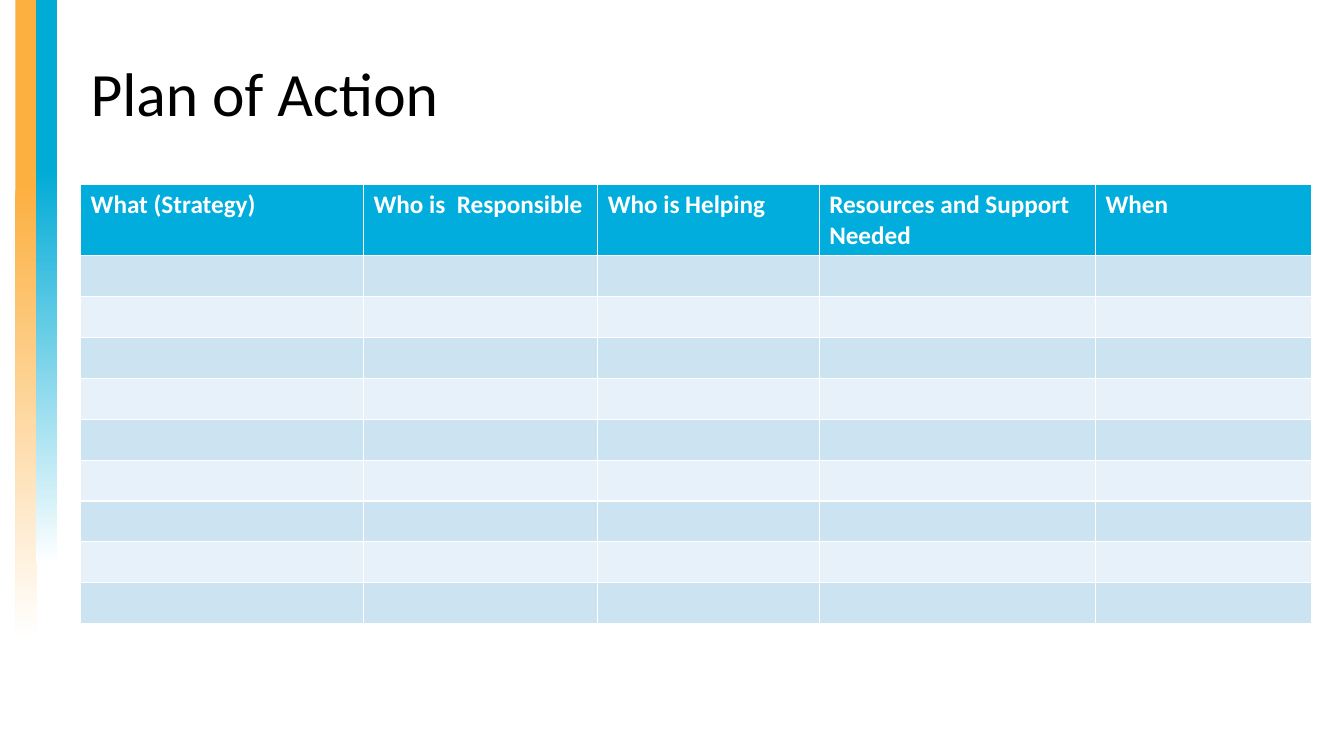
from pptx import Presentation
from pptx.dml.color import RGBColor
from pptx.enum.shapes import MSO_SHAPE
from pptx.enum.text import MSO_ANCHOR
from pptx.util import Pt

RECTANGLE = MSO_SHAPE.RECTANGLE
MIDDLE = MSO_ANCHOR.MIDDLE

TITLE = "Plan of Action"
# heading, column width
COLUMNS = [
    ("What (Strategy)", 202.1),
    ("Who is  Responsible", 167.3),
    ("Who is Helping", 158.2),
    ("Resources and Support Needed", 197.4),
    ("When", 154.1),
]
ACTION_ROWS = 9
# colour, left, height, where the fade starts
STRIPES = [("orange", 11, 456, 0.29), ("blue", 25.4, 403.2, 0.30)]

COLORS = {
    "orange": "FCB040",
    "blue": "00ABD6",
    "header": "00ADDC",
    "band_dark": "CCE3F2",
    "band_light": "E7F1F9",
    "white": "FFFFFF",
    "black": "000000",
}
FONT = "Calibri"
STRIPE_WIDTH = 15.4
LEFT, WIDTH = 57.6, 879.1
TITLE_TOP, TITLE_HEIGHT = 16.6, 104.4
TABLE_TOP, HEADER_HEIGHT, ROW_HEIGHT = 131.8, 50.9, 29.2


def rgb(name):
    return RGBColor.from_string(COLORS[name])


def write(frame, text, size, color, bold=False, line_spacing=None):
    paragraph = frame.paragraphs[0]
    paragraph.line_spacing = line_spacing
    run = paragraph.add_run()
    run.text = text
    run.font.name = FONT
    run.font.size = Pt(size)
    run.font.bold = bold
    run.font.color.rgb = rgb(color)


def add_stripe(slide, color, left, height, fade_start):
    """Draw a vertical stripe that fades to white at its foot."""
    stripe = slide.shapes.add_shape(
        RECTANGLE, Pt(left), Pt(0), Pt(STRIPE_WIDTH), Pt(height))
    stripe.shadow.inherit = False
    stripe.line.fill.background()
    stripe.fill.gradient()
    stripe.fill.gradient_angle = 270
    stops = [(fade_start, color), (1, "white")]
    for stop, (position, stop_color) in zip(stripe.fill.gradient_stops, stops):
        stop.position = position
        stop.color.rgb = rgb(stop_color)


def add_title(slide):
    box = slide.shapes.add_textbox(
        Pt(LEFT), Pt(TITLE_TOP), Pt(WIDTH), Pt(TITLE_HEIGHT))
    frame = box.text_frame
    frame.word_wrap = True
    frame.vertical_anchor = MIDDLE
    write(frame, TITLE, size=44, color="black", line_spacing=0.9)


def add_plan(slide):
    height = HEADER_HEIGHT + ACTION_ROWS * ROW_HEIGHT
    plan = slide.shapes.add_table(
        ACTION_ROWS + 1, len(COLUMNS),
        Pt(LEFT), Pt(TABLE_TOP), Pt(WIDTH), Pt(height)).table
    for column, (heading, width) in enumerate(COLUMNS):
        plan.columns[column].width = Pt(width)
        write(plan.cell(0, column).text_frame, heading,
              size=18, color="white", bold=True)
    for index, row in enumerate(plan.rows):
        row.height = Pt(ROW_HEIGHT if index else HEADER_HEIGHT)
        band = "band_dark" if index % 2 else "band_light"
        for cell in row.cells:
            cell.fill.solid()
            cell.fill.fore_color.rgb = rgb(band if index else "header")


def main():
    presentation = Presentation()
    presentation.slide_width = Pt(960)
    presentation.slide_height = Pt(540)
    slide = presentation.slides.add_slide(presentation.slide_layouts[6])
    for stripe in STRIPES:
        add_stripe(slide, *stripe)
    add_title(slide)
    add_plan(slide)
    presentation.save("out.pptx")


if __name__ == "__main__":
    main()
